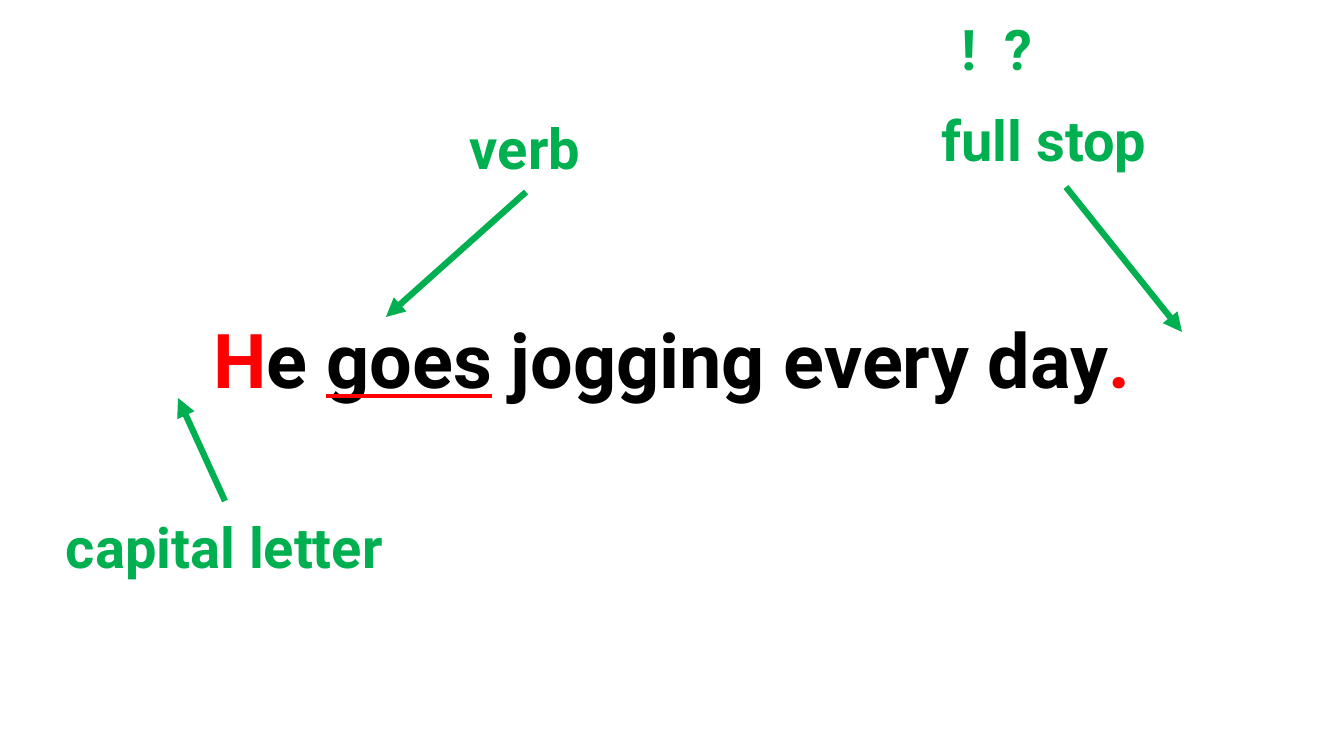
import pptx
import pptx.dml.color
import pptx.enum.dml
import pptx.enum.shapes
import pptx.enum.text
import pptx.oxml
import pptx.oxml.ns
import pptx.util

GREEN = pptx.dml.color.RGBColor(0x00, 0xB0, 0x50)
RED = pptx.dml.color.RGBColor(0xFF, 0x00, 0x00)
BLACK = pptx.dml.color.RGBColor(0x00, 0x00, 0x00)

LEFT = pptx.enum.text.PP_ALIGN.LEFT
CENTER = pptx.enum.text.PP_ALIGN.CENTER

SLIDE_SIZE = (1344, 756)
EMU_PER_PX = 914400 / 100.8

SENTENCE = [
    ("H", RED, False),
    ("e ", BLACK, False),
    ("goes", BLACK, True),
    (" jogging every day", BLACK, False),
    (".", RED, False),
]
SENTENCE_FRAME = (56, 308, 1232, 102)

LABELS = [
    ("capital letter", (56, 508, 426, 78), LEFT),
    ("full stop", (898, 101, 292, 78), CENTER),
    ("!  ?", (851, 10, 292, 146), CENTER),
    ("verb", (460, 109, 193, 78), LEFT),
]

ARROWS = [
    ((225, 501), (178, 398)),
    ((1066, 187), (1182, 332)),
    ((526, 192), (386, 317)),
]


def px(*lengths):
    return [pptx.util.Emu(round(length * EMU_PER_PX)) for length in lengths]


def color_underline(span, color):
    fill = pptx.oxml.parse_xml(
        f'<a:uFill {pptx.oxml.ns.nsdecls("a")}><a:solidFill>'
        f'<a:srgbClr val="{color}"/></a:solidFill></a:uFill>'
    )
    properties = span.font._element
    properties.find(pptx.oxml.ns.qn("a:latin")).addprevious(fill)


def add_text(page, spans, frame, size, alignment):
    box = page.shapes.add_textbox(*px(*frame))
    box.text_frame.word_wrap = True
    para = box.text_frame.paragraphs[0]
    para.alignment = alignment
    for text, color, underlined in spans:
        span = para.add_run()
        span.text = text
        span.font.color.rgb = color
        formats = {
            "name": "Roboto",
            "size": pptx.util.Pt(size),
            "bold": True,
            "underline": underlined,
        }
        for attribute, value in formats.items():
            setattr(span.font, attribute, value)
        if underlined:
            color_underline(span, RED)


def add_arrow(page, start, end):
    arrow = page.shapes.add_connector(
        pptx.enum.shapes.MSO_CONNECTOR.STRAIGHT, *px(*start, *end)
    )
    arrow.line.color.rgb = GREEN
    arrow.line.width = pptx.util.Pt(4.5)
    head = pptx.oxml.parse_xml(
        f'<a:tailEnd {pptx.oxml.ns.nsdecls("a")} type="triangle"/>'
    )
    arrow.line._get_or_add_ln().append(head)
    effects = pptx.oxml.parse_xml(f'<a:effectLst {pptx.oxml.ns.nsdecls("a")}/>')
    arrow._element.spPr.append(effects)


def main():
    deck = pptx.Presentation()
    deck.slide_width, deck.slide_height = px(*SLIDE_SIZE)
    page = deck.slides.add_slide(deck.slide_layouts[6])
    add_text(page, SENTENCE, SENTENCE_FRAME, 54, CENTER)
    for text, frame, alignment in LABELS:
        add_text(page, [(text, GREEN, False)], frame, 40, alignment)
    for start, end in ARROWS:
        add_arrow(page, start, end)
    deck.save("out.pptx")


if __name__ == "__main__":
    main()
